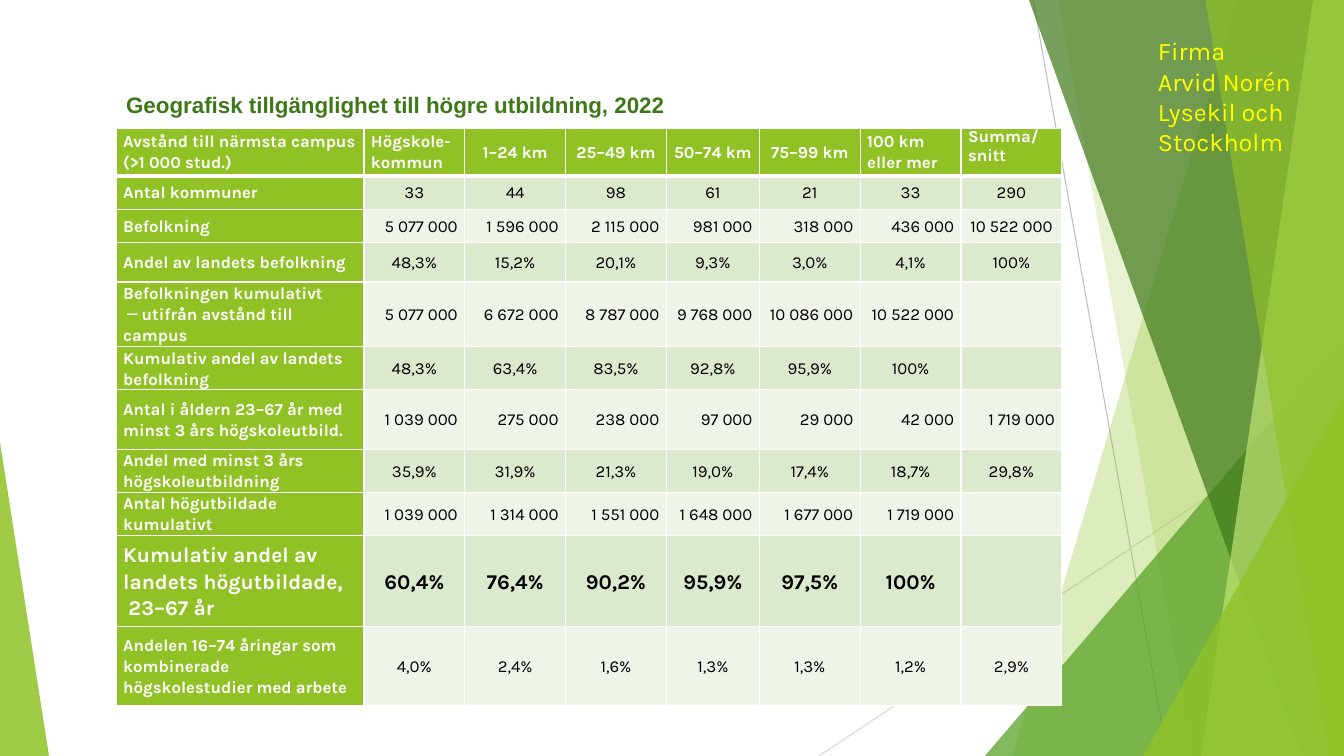
"""Build a slide with a table on geographic access to higher education."""
from dataclasses import dataclass

from lxml import etree
from pptx import Presentation
from pptx.dml.color import RGBColor
from pptx.enum import shapes, text
from pptx.oxml import ns
from pptx.util import Pt


@dataclass(frozen=True)
class Theme:
    green: str = "90C226"
    leaf: str = "54A021"
    dark: str = "3F7819"
    lime: str = "C0E474"
    band: str = "DBE9CD"
    pale: str = "EEF4E8"
    white: str = "FFFFFF"
    black: str = "000000"
    yellow: str = "FFFF00"
    grey: str = "BFBFBF"
    silver: str = "D9D9D9"
    title_font: str = "Arial"
    body_font: str = "Karla"
    title_size: int = 16
    cell_size: int = 12
    key_size: int = 15
    firm_size: int = 18


def style_runs(p, font, size, color, bold=False):
    for r in p.runs:
        r.font.name = font
        r.font.size = Pt(size)
        r.font.bold = bold
        r.font.color.rgb = RGBColor.from_string(color)


def add_border(tc_pr, side, width):
    ln = etree.SubElement(tc_pr, ns.qn(f"a:ln{side}"), w=str(Pt(width)))
    fill = etree.SubElement(ln, ns.qn("a:solidFill"))
    etree.SubElement(fill, ns.qn("a:srgbClr"), val=theme.white)


theme = Theme()
W, H = 960, 540
prs = Presentation()
prs.slide_width, prs.slide_height = Pt(W), Pt(H)
s = prs.slides.add_slide(prs.slide_layouts[6])

for x1, y1, x2, y2, color in [
    (738, 0, 834, H, theme.grey),
    (W, 290, 585, H, theme.silver),
]:
    line = s.shapes.add_connector(
        shapes.MSO_CONNECTOR.STRAIGHT, Pt(x1), Pt(y1), Pt(x2), Pt(y2))
    line.line.color.rgb = RGBColor.from_string(color)
    line.line.width = Pt(0.75)
    etree.SubElement(line._element.spPr, ns.qn("a:effectLst"))

# fmt: off
facets = [
    ("band", (884, 723), theme.green, 30),
    ("band", (756, 852), theme.green, 20),
    ("triangle", (703.5, 240, 256.5, 300, 1), theme.leaf, 72),
    ("band", (735, 930), theme.dark, 70),
    ("band", (938, 858), theme.lime, 70),
    ("band", (861, 949), theme.green, 65),
    ("triangle", (816.5, 283, 143.5, 257, 1), theme.green, 80),
    ("triangle", (0, 316, 35, 224, 0), theme.green, 85),
]
# fmt: on
for kind, geometry, color, opacity in facets:
    if kind == "band":
        top_x, bottom_x = geometry
        outline = s.shapes.build_freeform(top_x, 0, scale=Pt(1))
        outline.add_line_segments([(W, 0), (W, H), (bottom_x, H)], close=True)
        sp = outline.convert_to_shape()
    else:
        *box, apex = geometry
        sp = s.shapes.add_shape(
            shapes.MSO_SHAPE.ISOSCELES_TRIANGLE, *[Pt(v) for v in box])
        sp.adjustments[0] = apex
    sp.shadow.inherit = False
    sp.line.fill.background()
    sp.fill.solid()
    sp.fill.fore_color.rgb = RGBColor.from_string(color)
    clr = sp._element.spPr.find(ns.qn("a:solidFill"))[0]
    etree.SubElement(clr, ns.qn("a:alpha"), val=str(opacity * 1000))

for box, words, font, size, color, bold, anchor in [
    ((83, 60.5, 630, 28), "Geografisk tillgänglighet till högre utbildning, 2022",
     theme.title_font, theme.title_size, theme.dark, True, text.MSO_ANCHOR.MIDDLE),
    ((820, 22, 140, 95), "Firma\nArvid Norén\nLysekil och\nStockholm",
     theme.body_font, theme.firm_size, theme.yellow, False, text.MSO_ANCHOR.TOP),
]:
    tf = s.shapes.add_textbox(*[Pt(v) for v in box]).text_frame
    tf.word_wrap = True
    tf.vertical_anchor = anchor
    tf.text = words
    for p in tf.paragraphs:
        style_runs(p, font, size, color, bold)

rows = [
    (34, ["Avstånd till närmsta campus (>1 000 stud.)", "Högskole- kommun", "1–24 km",
          "25–49 km", "50–74 km", "75–99 km", "100 km eller mer", "Summa/\nsnitt"]),
    (24, ["Antal kommuner", "33", "44", "98", "61", "21", "33", "290"]),
    (24, ["Befolkning", "5 077 000", "1 596 000", "2 115 000", "981 000",
          "318 000", "436 000", "10 522 000"]),
    (28, ["Andel av landets befolkning", "48,3%", "15,2%", "20,1%", "9,3%",
          "3,0%", "4,1%", "100%"]),
    (42.5, ["Befolkningen kumulativt\v ─ utifrån avstånd till campus", "5 077 000",
            "6 672 000", "8 787 000", "9 768 000", "10 086 000", "10 522 000", ""]),
    (29.5, ["Kumulativ andel av landets befolkning", "48,3%", "63,4%", "83,5%",
            "92,8%", "95,9%", "100%", ""]),
    (42.5, ["Antal i åldern 23–67 år med minst 3 års högskoleutbild.", "1 039 000",
            "275 000", "238 000", "97 000", "29 000", "42 000", "1 719 000"]),
    (29.5, ["Andel med minst 3 års högskoleutbildning", "35,9%", "31,9%", "21,3%",
            "19,0%", "17,4%", "18,7%", "29,8%"]),
    (31, ["Antal högutbildade kumulativt", "1 039 000", "1 314 000", "1 551 000",
          "1 648 000", "1 677 000", "1 719 000", ""]),
    (65, ["Kumulativ andel av landets högutbildade,\v 23–67 år", "60,4%", "76,4%",
          "90,2%", "95,9%", "97,5%", "100%", ""]),
    (56, ["Andelen 16–74 åringar som kombinerade högskolestudier med arbete", "4,0%",
          "2,4%", "1,6%", "1,3%", "1,3%", "1,2%", "2,9%"]),
]
widths = [177, 72, 72, 72, 66.5, 72, 72, 72]
KEY_ROW = 9
LEFT_HEADERS = (1, 6, 7)
TOTAL_POPULATION = (2, 7)

table = s.shapes.add_table(
    len(rows), len(widths), Pt(83), Pt(91.5),
    Pt(sum(widths)), Pt(sum(height for height, _ in rows))).table
table.first_row = table.horz_banding = False
for column, width in zip(table.columns, widths):
    column.width = Pt(width)

for i, (height, values) in enumerate(rows):
    table.rows[i].height = Pt(height)
    size = theme.key_size if i == KEY_ROW else theme.cell_size
    for j, value in enumerate(values):
        cell = table.cell(i, j)
        heading = i == 0 or j == 0
        cell.margin_left = cell.margin_right = Pt(5)
        cell.margin_top = cell.margin_bottom = 0
        cell.vertical_anchor = text.MSO_ANCHOR.MIDDLE
        tc_pr = cell._tc.get_or_add_tcPr()
        for side in "LRTB":
            thick = (i, side) in [(0, "B"), (1, "T")]
            add_border(tc_pr, side, 3 if thick else 1)
        cell.fill.solid()
        fill = theme.green if heading else theme.band if i % 2 else theme.pale
        cell.fill.fore_color.rgb = RGBColor.from_string(fill)
        if j == 0 or (i == 0 and j in LEFT_HEADERS):
            align = text.PP_ALIGN.LEFT
        elif i > 0 and " " in value and (i, j) != TOTAL_POPULATION:
            align = text.PP_ALIGN.RIGHT
        else:
            align = text.PP_ALIGN.CENTER
        cell.text_frame.text = value
        for p in cell.text_frame.paragraphs:
            p.alignment = align
            p.line_spacing = Pt(6) if "\n" in value else 1.07
            p.space_after = Pt(8)
            p.font.size = Pt(size)
            style_runs(p, theme.body_font, size,
                       theme.white if heading else theme.black,
                       heading or i == KEY_ROW)

prs.save("out.pptx")
